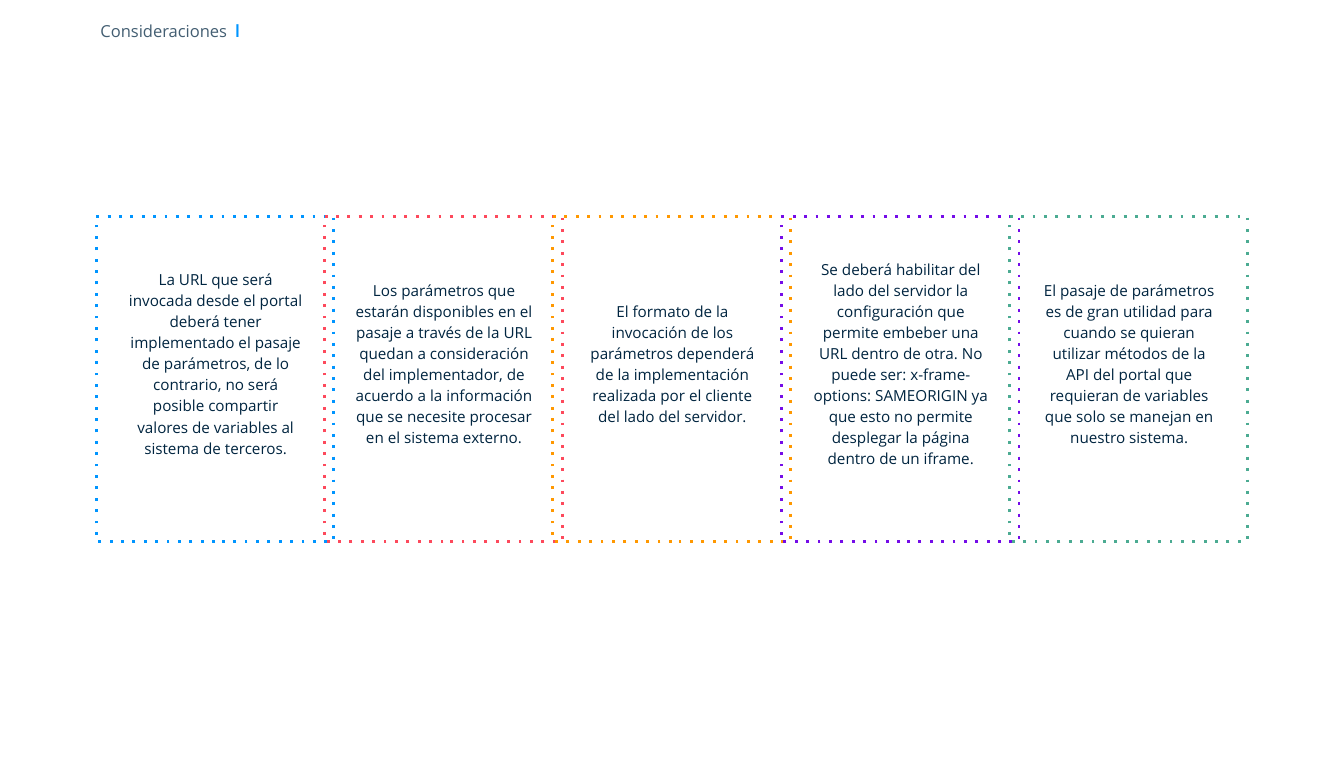
from dataclasses import dataclass

from lxml import etree
from pptx import Presentation
from pptx.dml.color import RGBColor
from pptx.enum.shapes import MSO_SHAPE
from pptx.enum.text import MSO_ANCHOR, PP_ALIGN
from pptx.oxml.ns import qn
from pptx.slide import Slide
from pptx.util import Cm, Pt

RECTANGLE = MSO_SHAPE.RECTANGLE
MIDDLE = MSO_ANCHOR.MIDDLE
CENTER = PP_ALIGN.CENTER

BLUE = RGBColor(0x00, 0x95, 0xFF)
RED = RGBColor(0xFD, 0x49, 0x5C)
ORANGE = RGBColor(0xFF, 0x98, 0x00)
PURPLE = RGBColor(0x74, 0x0C, 0xE8)
GREEN = RGBColor(0x4B, 0xAB, 0x92)
NAVY = RGBColor(0x00, 0x25, 0x40)
SLATE = RGBColor(0x43, 0x5E, 0x72)
WHITE = RGBColor(0xFF, 0xFF, 0xFF)

BODY_FONT = "Open Sans"
ACCENT_FONT = "Manrope"

CARD_LEFT, CARD_TOP = 2.67, 6.0
CARD_WIDTH, CARD_HEIGHT = 6.6, 9.02
CARD_PITCH = 6.34
TEXT_INDENT, TEXT_TOP = 0.55, 6.96
TEXT_WIDTH, TEXT_HEIGHT = 5.54, 6.2


@dataclass(frozen=True)
class Consideration:
    color: RGBColor
    text: str


CONSIDERATIONS = (
    Consideration(BLUE, "La URL que será invocada desde el portal deberá tener "
                  "implementado el pasaje de parámetros, de lo contrario, no será "
                  "posible compartir valores de variables al sistema de terceros."),
    Consideration(RED, "Los parámetros que estarán disponibles en el pasaje a través "
                  "de la URL quedan a consideración del implementador, de acuerdo a la "
                  "información que se necesite procesar en el sistema externo."),
    Consideration(ORANGE, "El formato de la invocación de los parámetros dependerá de "
                  "la implementación realizada por el cliente del lado del servidor."),
    Consideration(PURPLE, "Se deberá habilitar del lado del servidor la configuración "
                  "que permite embeber una URL dentro de otra. No puede ser: "
                  "x-frame-options: SAMEORIGIN ya que esto no permite desplegar la "
                  "página dentro de un iframe."),
    Consideration(GREEN, "El pasaje de parámetros es de gran utilidad para cuando se "
                  "quieran utilizar métodos de la API del portal que requieran de "
                  "variables que solo se manejan en nuestro sistema."),
)


def add_heading(slide: Slide) -> None:
    heading = slide.shapes.add_textbox(Cm(2.41), Cm(0.25), Cm(13.97), Cm(1.19))
    heading.fill.solid()
    heading.fill.fore_color.rgb = WHITE
    frame = heading.text_frame
    frame.word_wrap = True
    frame.vertical_anchor = MIDDLE
    frame.margin_left = frame.margin_right = Cm(0.38)
    frame.margin_top = frame.margin_bottom = Cm(0.38)

    paragraph = frame.paragraphs[0]
    tabs = etree.SubElement(paragraph._p.get_or_add_pPr(), qn("a:tabLst"))
    etree.SubElement(tabs, qn("a:tab"), pos=str(Cm(3.73)), algn="l")

    title = paragraph.add_run()
    title.text = "Consideraciones\t"
    title.font.name = BODY_FONT
    title.font.size = Pt(13)
    title.font.color.rgb = SLATE

    bar = paragraph.add_run()
    bar.text = "|"
    bar.font.name = ACCENT_FONT
    bar.font.size = Pt(14)
    bar.font.bold = True
    bar.font.color.rgb = BLUE


def add_card(slide: Slide, left: float, consideration: Consideration) -> None:
    border = slide.shapes.add_shape(
        RECTANGLE, Cm(left), Cm(CARD_TOP), Cm(CARD_WIDTH), Cm(CARD_HEIGHT))
    border.shadow.inherit = False
    border.fill.background()
    border.line.color.rgb = consideration.color
    border.line.width = Pt(2.25)
    outline = border._element.spPr.find(qn("a:ln"))
    etree.SubElement(outline, qn("a:prstDash"), val="dot")

    body = slide.shapes.add_textbox(
        Cm(left + TEXT_INDENT), Cm(TEXT_TOP), Cm(TEXT_WIDTH), Cm(TEXT_HEIGHT))
    frame = body.text_frame
    frame.word_wrap = True
    frame.vertical_anchor = MIDDLE
    frame.margin_left = frame.margin_right = Cm(0.28)
    frame.margin_top = frame.margin_bottom = Cm(0.15)
    paragraph = frame.paragraphs[0]
    paragraph.text = consideration.text
    paragraph.alignment = CENTER
    paragraph.line_spacing = 1.15
    paragraph.font.name = BODY_FONT
    paragraph.font.size = Pt(12)
    paragraph.font.color.rgb = NAVY


def main() -> None:
    presentation = Presentation()
    presentation.slide_width = Cm(37.31)
    presentation.slide_height = Cm(21.01)
    slide = presentation.slides.add_slide(presentation.slide_layouts[6])
    add_heading(slide)
    for index, consideration in enumerate(CONSIDERATIONS):
        add_card(slide, CARD_LEFT + index * CARD_PITCH, consideration)
    presentation.save("out.pptx")


if __name__ == "__main__":
    main()
